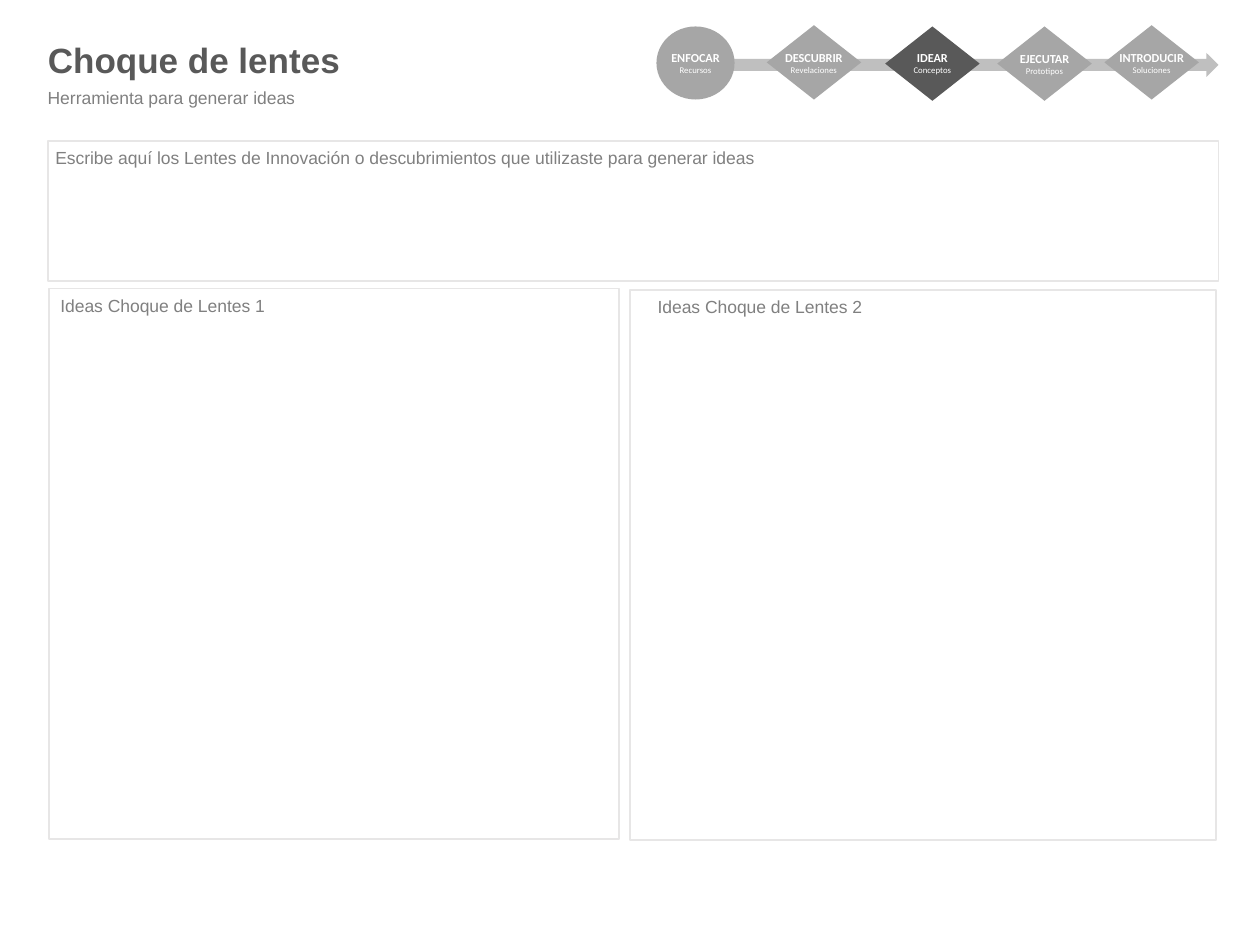
import pptx
from pptx.dml.color import RGBColor
from pptx.enum.shapes import MSO_SHAPE
from pptx.enum.text import MSO_ANCHOR, PP_ALIGN
from pptx.util import Inches, Pt

THEME = {
    "dark": "595959", "mid": "A6A6A6", "arrow": "BFBFBF", "border": "E7E6E6",
    "title": {"size": 20, "bold": True, "name": "Arial", "color": "595959"},
    "body": {"size": 10, "bold": False, "name": "Arial", "color": "808080"},
    "stage": {"size": 7, "bold": True, "name": "Calibri", "color": "FFFFFF"},
    "detail": {"size": 5, "bold": False, "name": "Calibri", "color": "FFFFFF"},
}

TITLE = "Choque de lentes"
SUBTITLE = "Herramienta para generar ideas"

# name, detail, outline, fill, centre x, top, width, height, label top
DIAMOND = (0.75, 0.59)
STAGES = [
    ("ENFOCAR", "Recursos", MSO_SHAPE.OVAL, "mid", 5.52, 0.21, (0.62, 0.58), 0.35),
    ("DESCUBRIR", "Revelaciones", MSO_SHAPE.DIAMOND, "mid", 6.46, 0.20, DIAMOND, 0.35),
    ("IDEAR", "Conceptos", MSO_SHAPE.DIAMOND, "dark", 7.40, 0.21, DIAMOND, 0.35),
    ("EJECUTAR", "Prototipos", MSO_SHAPE.DIAMOND, "mid", 8.29, 0.21, DIAMOND, 0.36),
    ("INTRODUCIR", "Soluciones", MSO_SHAPE.DIAMOND, "mid", 9.14, 0.20, DIAMOND, 0.35),
]
LABEL_SIZE = (0.73, 0.3)

# heading, frame (left, top, width, height), heading left, heading width
PANELS = [
    ("Escribe aquí los Lentes de Innovación o descubrimientos que utilizaste "
     "para generar ideas", (0.38, 1.12, 9.29, 1.11), 0.34, 7.12),
    ("Ideas Choque de Lentes 1", (0.39, 2.29, 4.52, 4.37), 0.38, 3.51),
    ("Ideas Choque de Lentes 2", (5.0, 2.3, 4.65, 4.37), 5.12, 3.51),
]
HEADING_HEIGHT = 0.27


def rgb(value):
    return RGBColor.from_string(value)


def write(tf, lines, align=PP_ALIGN.LEFT):
    """Fill a text frame with (text, style name) lines, one paragraph each."""
    for i, (text, style) in enumerate(lines):
        p = tf.paragraphs[0] if i == 0 else tf.add_paragraph()
        p.alignment = align
        r = p.add_run()
        r.text = text
        for key, value in THEME[style].items():
            if key == "color":
                r.font.color.rgb = rgb(value)
            else:
                setattr(r.font, key, Pt(value) if key == "size" else value)


def add_text(s, box, lines, align=PP_ALIGN.LEFT, wrap=True):
    tf = s.shapes.add_textbox(*map(Inches, box)).text_frame
    tf.word_wrap = wrap
    write(tf, lines, align)


def add_shape(s, kind, box, fill=None, line=None):
    sp = s.shapes.add_shape(kind, *map(Inches, box))
    sp.shadow.inherit = False
    if fill:
        sp.fill.solid()
        sp.fill.fore_color.rgb = rgb(THEME[fill])
    else:
        sp.fill.background()
    if line:
        sp.line.color.rgb = rgb(THEME[line])
        sp.line.width = Pt(1)
    else:
        sp.line.fill.background()


def add_title(s):
    title = s.shapes.title
    for key, value in zip(("left", "top", "width", "height"), (0.28, 0.26, 4.9, 0.46)):
        setattr(title, key, Inches(value))
    tf = title.text_frame
    tf.word_wrap = True
    tf.vertical_anchor = MSO_ANCHOR.MIDDLE
    write(tf, [(TITLE, "title")])
    tf.paragraphs[0].line_spacing = 0.9


def add_stages(s):
    add_shape(s, MSO_SHAPE.RIGHT_ARROW, (5.79, 0.42, 3.88, 0.19), "arrow")
    for name, detail, kind, fill, centre, top, (w, h), label_top in STAGES:
        add_shape(s, kind, (centre - w / 2, top, w, h), fill)
        label_box = (centre - LABEL_SIZE[0] / 2, label_top, *LABEL_SIZE)
        add_text(s, label_box, [(name, "stage"), (detail, "detail")],
                 PP_ALIGN.CENTER, wrap=False)


def add_panels(s):
    for heading, frame, left, width in PANELS:
        add_shape(s, MSO_SHAPE.RECTANGLE, frame, line="border")
        add_text(s, (left, frame[1], width, HEADING_HEIGHT), [(heading, "body")])


def main():
    prs = pptx.Presentation()
    prs.slide_width, prs.slide_height = Inches(10), Inches(7.5)
    s = prs.slides.add_slide(prs.slide_layouts[5])
    add_title(s)
    add_text(s, (0.28, 0.64, 7.12, HEADING_HEIGHT), [(SUBTITLE, "body")])
    add_stages(s)
    add_panels(s)
    prs.save("out.pptx")


if __name__ == "__main__":
    main()
